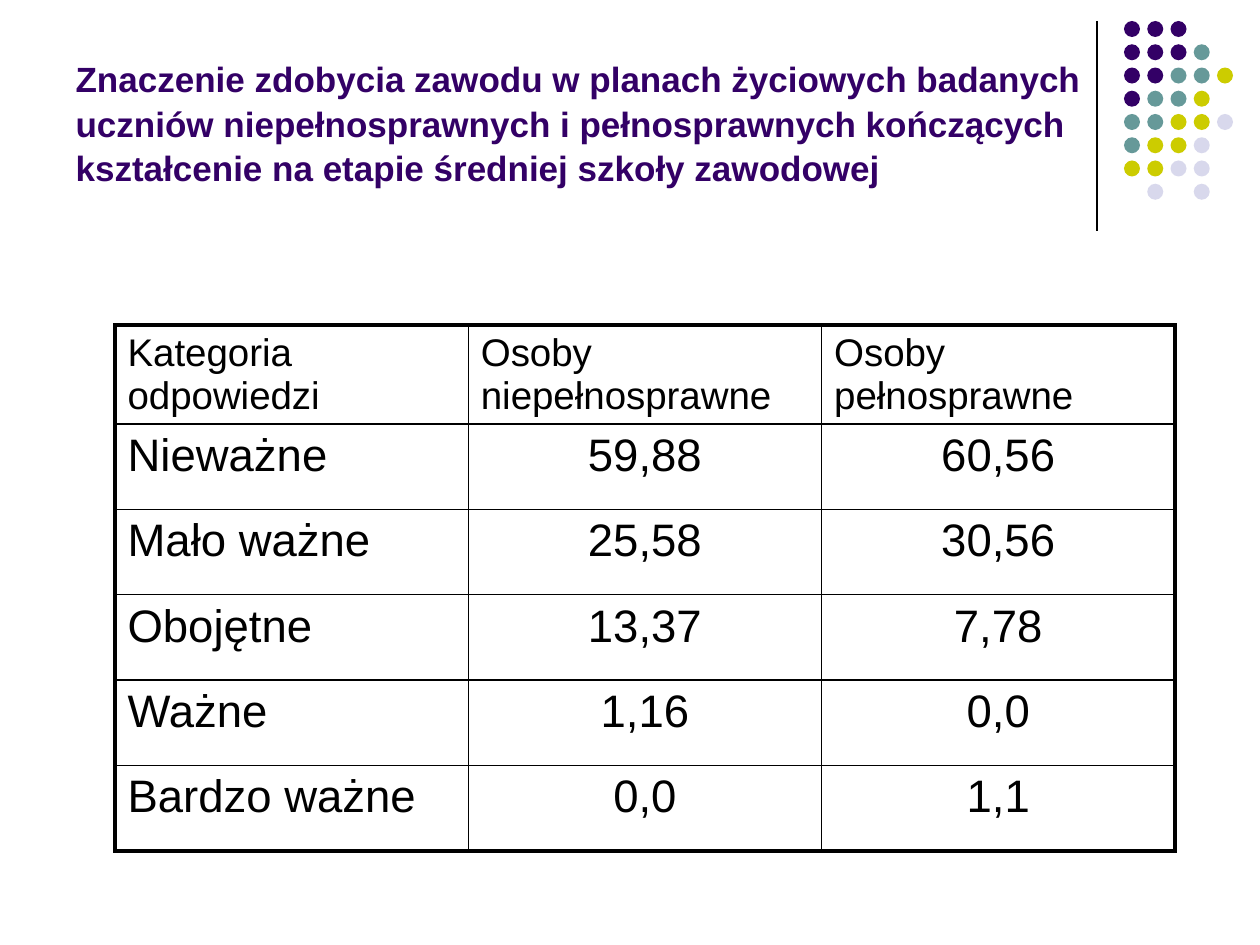
from dataclasses import dataclass
from lxml import etree
from pptx import Presentation
from pptx.dml.color import RGBColor
from pptx.enum import shapes, text
from pptx.oxml.ns import qn
from pptx.util import Emu, Pt

SCALE = 914400 / 126


@dataclass(frozen=True)
class Theme:
    font: str = "Arial"
    ink: str = "000000"
    plum: str = "330066"
    teal: str = "669999"
    lime: str = "CCCC00"
    mist: str = "D8D8EC"
    title: int = 20
    head: int = 22
    body: int = 26
    thin: float = 1
    thick: float = 2.25


THEME = Theme()

DOTS = ["PPP", "PPPT", "PPTTL", "PTTL", "TTLLM", "TLLM", "LLMM", " M M"]
HUES = {"P": THEME.plum, "T": THEME.teal, "L": THEME.lime, "M": THEME.mist}

ROWS = [
    ["Kategoria odpowiedzi", "Osoby niepełnosprawne", "Osoby pełnosprawne"],
    ["Nieważne", "59,88", "60,56"],
    ["Mało ważne", "25,58", "30,56"],
    ["Obojętne", "13,37", "7,78"],
    ["Ważne", "1,16", "0,0"],
    ["Bardzo ważne", "0,0", "1,1"],
]


def px(n):
    return Emu(round(n * SCALE))


def write(frame, words, size, color=THEME.ink, bold=False,
          align=text.PP_ALIGN.LEFT, pitch=None):
    para = frame.paragraphs[0]
    para.alignment = align
    para.line_spacing = pitch
    run = para.add_run()
    run.text = words
    font = run.font
    font.name, font.size, font.bold = THEME.font, Pt(size), bold
    font.color.rgb = RGBColor.from_string(color)


def edge(cell, side, width):
    props = cell._tc.get_or_add_tcPr()
    line = etree.SubElement(props, qn(f"a:ln{side}"), w=str(Pt(width)))
    fill = etree.SubElement(line, qn("a:solidFill"))
    etree.SubElement(fill, qn("a:srgbClr"), val=THEME.ink)


def add_title(slide, x, y, w, h):
    title = slide.shapes.title
    title.left, title.top, title.width, title.height = map(px, (x, y, w, h))
    frame = title.text_frame
    frame.word_wrap = True
    frame.auto_size = text.MSO_AUTO_SIZE.NONE
    frame.vertical_anchor = text.MSO_ANCHOR.BOTTOM
    write(frame, "Znaczenie zdobycia zawodu w planach życiowych badanych "
          "uczniów niepełnosprawnych i pełnosprawnych kończących "
          "kształcenie na etapie średniej szkoły zawodowej",
          THEME.title, color=THEME.plum, bold=True, pitch=1.06)


def add_rule(slide, x, y, h):
    rule = slide.shapes.add_connector(
        shapes.MSO_CONNECTOR.STRAIGHT, px(x), px(y), px(x), px(y + h))
    rule.line.width = Pt(0.75)
    rule.line.color.rgb = RGBColor.from_string(THEME.ink)
    etree.SubElement(rule._element.spPr, qn("a:effectLst"))


def add_dots(slide, x, y, w, size):
    step = (w - size) / 4
    group = slide.shapes.add_group_shape()
    for r, row in enumerate(DOTS):
        for c, key in enumerate(row):
            if key not in HUES:
                continue
            dot = group.shapes.add_shape(
                shapes.MSO_SHAPE.OVAL, px(x + c * step), px(y + r * step),
                px(size), px(size))
            dot.shadow.inherit = False
            dot.fill.solid()
            dot.fill.fore_color.rgb = RGBColor.from_string(HUES[key])
            dot.line.fill.background()


def add_grid(slide, x, y, w, h, top):
    count, span = len(ROWS), len(ROWS[0])
    grid = slide.shapes.add_table(
        count, span, px(x), px(y), px(w), px(h)).table
    grid.first_row = grid.horz_banding = False
    for col in grid.columns:
        col.width = px(w / span)
    for r, row in enumerate(ROWS):
        grid.rows[r].height = px((h - top) / (count - 1) if r else top)
        for c, words in enumerate(row):
            cell = grid.cell(r, c)
            outer = {"L": c == 0, "R": c == span - 1,
                     "T": r == 0, "B": r == count - 1}
            for side, rim in outer.items():
                edge(cell, side, THEME.thick if rim else THEME.thin)
            cell.fill.background()
            write(cell.text_frame, words, THEME.body if r else THEME.head,
                  align=text.PP_ALIGN.CENTER if r and c
                  else text.PP_ALIGN.LEFT)


def main():
    deck = Presentation()
    deck.slide_width, deck.slide_height = px(1260), px(945)
    slide = deck.slides.add_slide(deck.slide_layouts[5])
    add_rule(slide, 1097, 21, 210)
    add_dots(slide, 1124, 21, 109, 16)
    add_title(slide, 63, 16, 1040, 179)
    add_grid(slide, 115, 325, 1060, 526, 99)
    deck.save("out.pptx")


if __name__ == "__main__":
    main()
